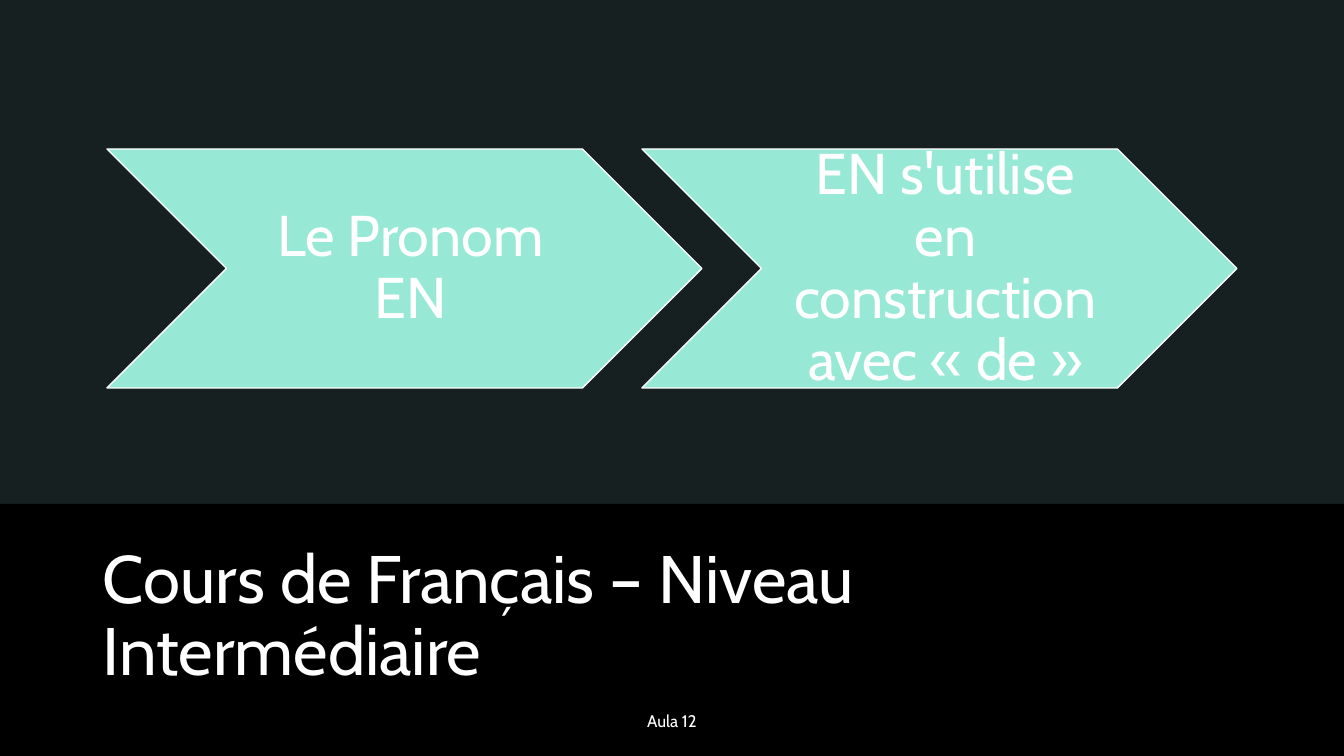
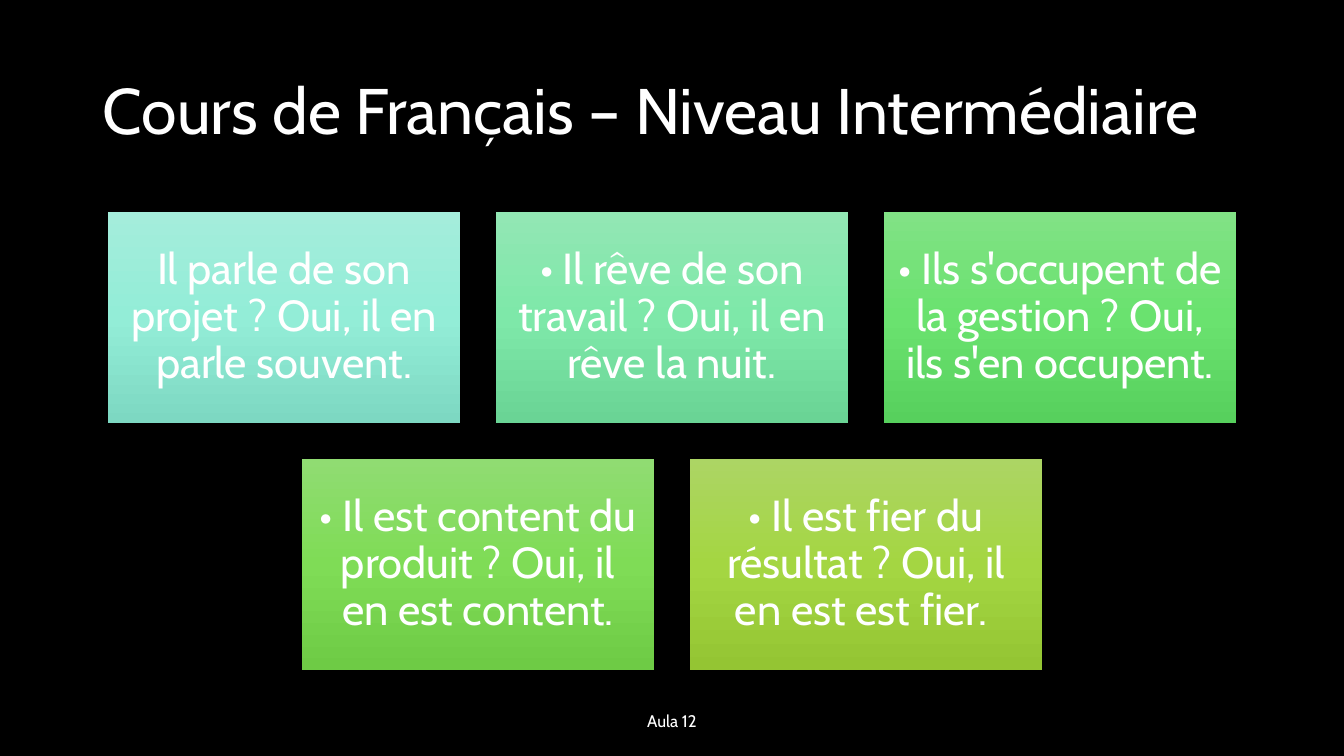
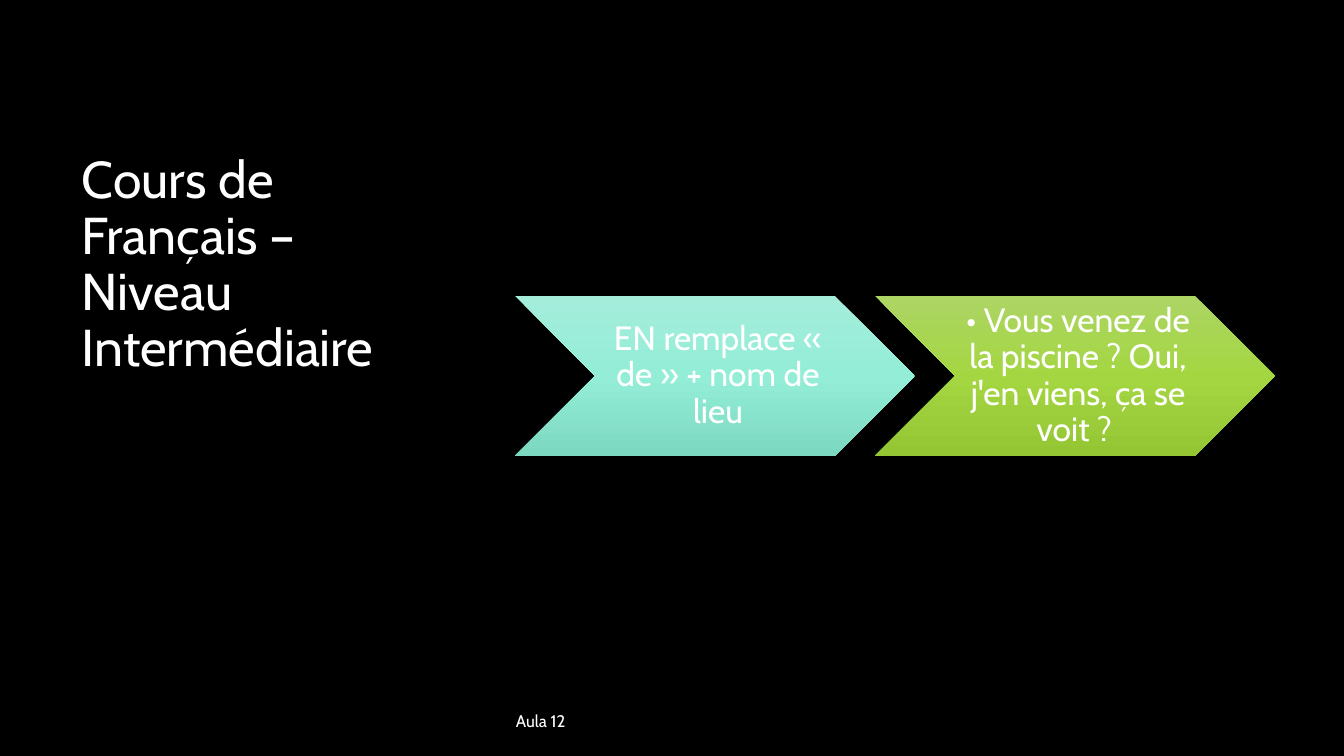
from copy import deepcopy

from lxml import etree
from pptx import Presentation
from pptx.dml.color import RGBColor
from pptx.enum.shapes import MSO_SHAPE
from pptx.enum.text import MSO_ANCHOR, MSO_AUTO_SIZE, PP_ALIGN
from pptx.oxml.ns import qn
from pptx.util import Pt

PX = 914400 / 100.8
W, H = 1344, 756
FONT = "Cabin"
TITLE = "Cours de Français – Niveau Intermédiaire"
FOOTER = "Aula 12"

BLACK = RGBColor(0x00, 0x00, 0x00)
WHITE = RGBColor(0xFF, 0xFF, 0xFF)
TINT = RGBColor(0x94, 0xD7, 0xE4)
MINT = RGBColor(0x97, 0xE9, 0xD5)
AQUA_GRAD = [RGBColor(0xA4, 0xED, 0xDB), RGBColor(0x93, 0xED, 0xD7), RGBColor(0x7D, 0xD8, 0xC2)]
JADE_GRAD = [RGBColor(0x92, 0xE7, 0xB4), RGBColor(0x7E, 0xE8, 0xA9), RGBColor(0x6A, 0xD4, 0x95)]
GREEN_GRAD = [RGBColor(0x81, 0xE2, 0x85), RGBColor(0x6A, 0xE2, 0x6F), RGBColor(0x57, 0xD0, 0x5D)]
LEAF_GRAD = [RGBColor(0x90, 0xDC, 0x72), RGBColor(0x7F, 0xDC, 0x56), RGBColor(0x6E, 0xCB, 0x45)]
LIME_GRAD = [RGBColor(0xAC, 0xD5, 0x64), RGBColor(0xA4, 0xD6, 0x42), RGBColor(0x94, 0xC5, 0x33)]

RECT, CHEVRON = MSO_SHAPE.RECTANGLE, MSO_SHAPE.CHEVRON
LEFT, CENTER = PP_ALIGN.LEFT, PP_ALIGN.CENTER
TOP, MIDDLE = MSO_ANCHOR.TOP, MSO_ANCHOR.MIDDLE


def write(sp, text, size, align=CENTER, anchor=MIDDLE, spacing=0.9, inset=(10, 5, 10, 5)):
    tf = sp.text_frame
    tf.word_wrap = True
    tf.auto_size = MSO_AUTO_SIZE.NONE
    tf.vertical_anchor = anchor
    tf.margin_left, tf.margin_top, tf.margin_right, tf.margin_bottom = [round(v * PX) for v in inset]
    p = tf.paragraphs[0]
    p.alignment = align
    p.line_spacing = spacing
    r = p.add_run()
    r.text = text
    r.font.name = FONT
    r.font.size = Pt(size)
    r.font.color.rgb = WHITE


def add_block(s, kind, box, fill, outline=False):
    sp = s.shapes.add_shape(kind, *[round(v * PX) for v in box])
    sp.shadow.inherit = False
    if isinstance(fill, list):
        sp.fill.gradient()
        sp.fill.gradient_angle = 270
        stops = sp._element.spPr.find(".//" + qn("a:gsLst"))
        stops.append(deepcopy(stops[-1]))
        for stop, color, position in zip(sp.fill.gradient_stops, fill, (0, 0.5, 1)):
            stop.color.rgb = color
            stop.position = position
    else:
        sp.fill.solid()
        sp.fill.fore_color.rgb = fill
    if outline:
        sp.line.color.rgb = WHITE
        sp.line.width = Pt(1)
    else:
        sp.line.fill.background()
    return sp


prs = Presentation()
prs.slide_width, prs.slide_height = round(W * PX), round(H * PX)
background = prs.slide_master.background.fill
background.solid()
background.fore_color.rgb = BLACK

BAND_Y, SIDE_W = 504, 449
intro_panels = [((0, 0, W, BAND_Y), TINT, 15), ((0, BAND_Y, W, H - BAND_Y), BLACK, 100)]
places_panels = [((SIDE_W, 0, W - SIDE_W, H), BLACK, 20), ((0, 0, SIDE_W, H), BLACK, 100)]
pages = [
    (intro_panels, (93, 540, 1152, 141), 48, TOP, (445, 701, 454, 40), CENTER),
    ([], (93, 40, 1159, 147), 46, MIDDLE, (445, 701, 454, 40), CENTER),
    (places_panels, (72, 149, 324, 491), 37, TOP, (506, 701, 386, 40), LEFT),
]
slides = []
for panels, title_box, size, anchor, footer_box, align in pages:
    s = prs.slides.add_slide(prs.slide_layouts[5])
    slides.append(s)
    title = s.shapes.title
    for box, fill, opacity in panels:
        sp = add_block(s, RECT, box, fill)
        if opacity < 100:
            color = sp._element.spPr.find(".//" + qn("a:srgbClr"))
            etree.SubElement(color, qn("a:alpha")).set("val", str(opacity * 1000))
        title._element.addprevious(sp._element)
    title.left, title.top, title.width, title.height = [round(v * PX) for v in title_box]
    write(title, TITLE, size, align=LEFT, anchor=anchor)
    footer = s.shapes.add_textbox(*[round(v * PX) for v in footer_box])
    write(footer, FOOTER, 12, align=align, spacing=1)

intro, examples, places = slides

for i, text in enumerate(["Le Pronom EN", "EN s'utilise en construction avec « de »"]):
    sp = add_block(intro, CHEVRON, (107 + i * 535, 149, 595, 239), MINT, outline=True)
    write(sp, text, 41, inset=(18, 6, 6, 6))

CARD_W, CARD_H, GAP = 352, 211, 36
rows = [
    [
        ("Il parle de son projet ? Oui, il en parle souvent.", AQUA_GRAD),
        ("• Il rêve de son travail ? Oui, il en rêve la nuit.", JADE_GRAD),
        ("• Ils s'occupent de la gestion ? Oui, ils s'en occupent.", GREEN_GRAD),
    ],
    [
        ("• Il est content du produit ? Oui, il en est content.", LEAF_GRAD),
        ("• Il est fier du résultat ? Oui, il en est est fier. ", LIME_GRAD),
    ],
]
for j, row in enumerate(rows):
    left = (W - len(row) * (CARD_W + GAP) + GAP) / 2
    for i, (text, fill) in enumerate(row):
        box = (left + i * (CARD_W + GAP), 212 + j * (CARD_H + GAP), CARD_W, CARD_H)
        write(add_block(examples, RECT, box, fill), text, 31, inset=(13, 13, 13, 13))

steps = [
    ("EN remplace « de » + nom de lieu", AQUA_GRAD),
    ("• Vous venez de la piscine ? Oui, j'en viens, ça se voit ? ", LIME_GRAD),
]
for i, (text, fill) in enumerate(steps):
    sp = add_block(places, CHEVRON, (515 + i * 360, 296, 400, 160), fill)
    write(sp, text, 24, inset=(10, 4, 4, 4))

prs.save("out.pptx")
